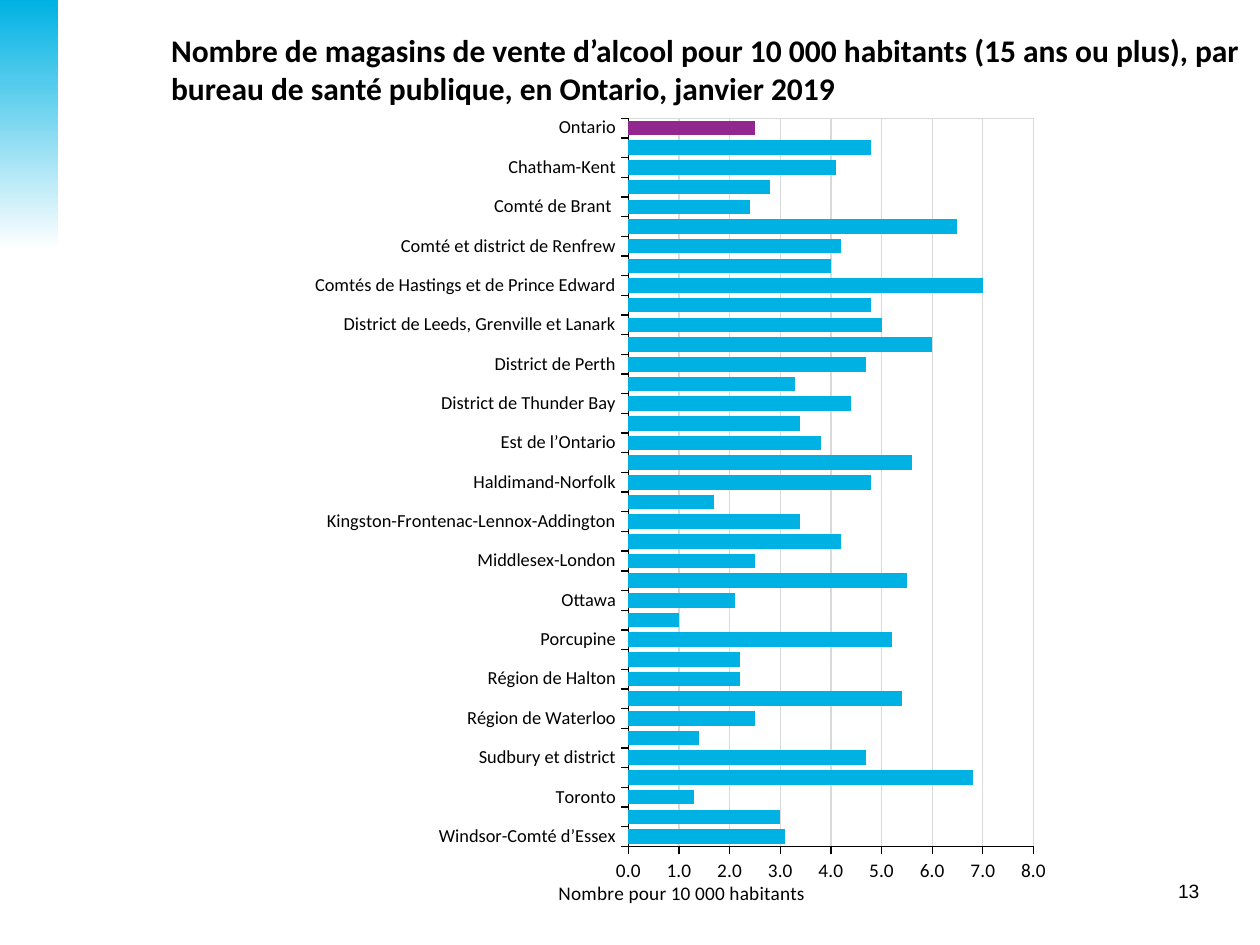
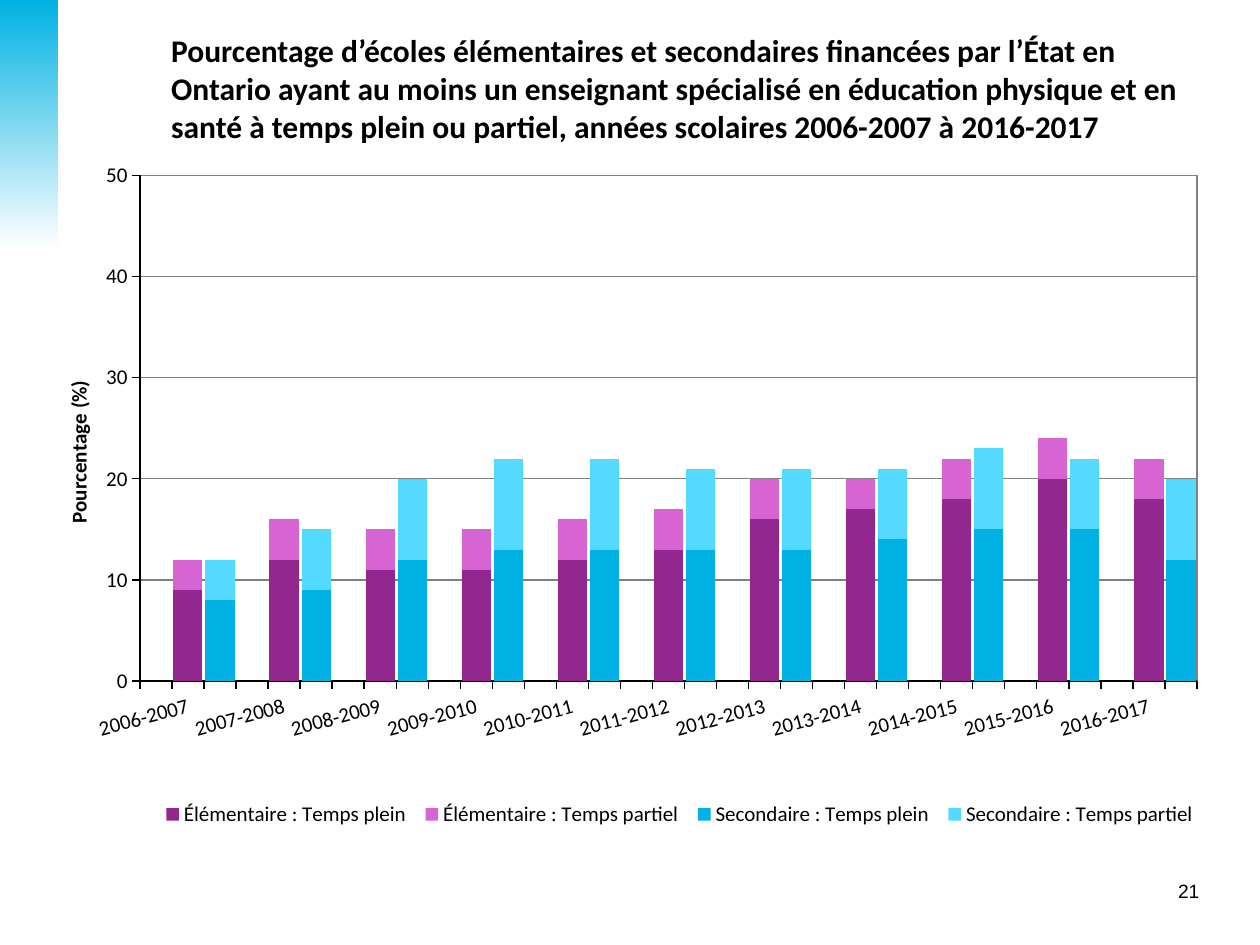
from dataclasses import dataclass

from lxml.etree import SubElement
from pptx import Presentation
from pptx.chart.data import CategoryChartData
from pptx.dml.color import RGBColor
from pptx.enum.chart import (XL_CHART_TYPE, XL_LEGEND_POSITION, XL_TICK_LABEL_POSITION,
                             XL_TICK_MARK)
from pptx.enum.shapes import MSO_SHAPE
from pptx.enum.text import PP_ALIGN
from pptx.oxml import parse_xml
from pptx.oxml.ns import qn
from pptx.util import Cm, Pt


@dataclass(frozen=True)
class Theme:
    blue: str = "00B2E3"
    light_blue: str = "55DAFF"
    purple: str = "92278F"
    pink: str = "D665D3"
    black: str = "000000"
    white: str = "FFFFFF"
    pale_grid: str = "D9D9D9"
    dark_grid: str = "808080"
    font: str = "Calibri"
    number_font: str = "Arial"
    title_size: float = 18
    chart_size: float = 12
    small_size: float = 11
    label_size: float = 10.5
    line_width: float = 0.75


THEME = Theme()

# Stores per 10 000 inhabitants, from the bottom bar to the top one
STORES = {
    "Windsor-Comté d’Essex": 3.1,
    "Wellington-Dufferin-Guelph": 3,
    "Toronto": 1.3,
    "Timiskaming": 6.8,
    "Sudbury et district": 4.7,
    "Région de York": 1.4,
    "Région de Waterloo": 2.5,
    "Région de Niagara": 5.4,
    "Région de Halton": 2.2,
    "Région de Durham": 2.2,
    "Porcupine": 5.2,
    "Peel": 1,
    "Ottawa": 2.1,
    "Nord-Ouest": 5.5,
    "Middlesex-London": 2.5,
    "Lambton": 4.2,
    "Kingston-Frontenac-Lennox-Addington": 3.4,
    "Hamilton": 1.7,
    "Haldimand-Norfolk": 4.8,
    "Grey Bruce ": 5.6,
    "Est de l’Ontario": 3.8,
    "Elgin-St. Thomas": 3.4,
    "District de Thunder Bay": 4.4,
    "District de Simcoe-Muskoka": 3.3,
    "District de Perth": 4.7,
    "District de North Bay-Parry Sound": 6,
    "District de Leeds, Grenville et Lanark": 5,
    "District d’Haliburton, de Kawartha et de Pine Ridge": 4.8,
    "Comtés de Hastings et de Prince Edward": 7,
    "Comté/Ville de Peterborough": 4,
    "Comté et district de Renfrew": 4.2,
    "Comté de Huron": 6.5,
    "Comté de Brant ": 2.4,
    "Comté d’Oxford": 2.8,
    "Chatham-Kent": 4.1,
    "Algoma": 4.8,
    "Ontario": 2.5,
}

# Each school year takes three slots: a gap, elementary, secondary
ELEMENTARY, SECONDARY = 1, 2
SCHOOL_YEARS = [f"{year}-{year + 1}" for year in range(2006, 2017)]
SCHOOLS = [
    ("Élémentaire : Temps plein", ELEMENTARY, THEME.purple,
     [9, 12, 11, 11, 12, 13, 16, 17, 18, 20, 18]),
    ("Élémentaire : Temps partiel", ELEMENTARY, THEME.pink,
     [3, 4, 4, 4, 4, 4, 4, 3, 4, 4, 4]),
    ("Secondaire : Temps plein", SECONDARY, THEME.blue,
     [8, 9, 12, 13, 13, 13, 13, 14, 15, 15, 12]),
    ("Secondaire : Temps partiel", SECONDARY, THEME.light_blue,
     [4, 6, 8, 9, 9, 8, 8, 7, 8, 7, 8]),
]


def spread(values, slot, empty):
    """Put each value in its slot of a group of three."""
    return [v if i == slot else empty for v in values for i in range(3)]


def paint(fill, color):
    fill.solid()
    fill.fore_color.rgb = RGBColor.from_string(color)


def place(element, index, x, y, w=None, h=None, inner=False):
    """Give a chart part a fixed place, in fractions of the chart."""
    layout = element.find(qn("c:layout"))
    if layout is None:
        layout = element.makeelement(qn("c:layout"))
        element.insert(index, layout)
    manual = SubElement(layout, qn("c:manualLayout"))
    settings = [("layoutTarget", "inner" if inner else None), ("xMode", "edge"),
                ("yMode", "edge"), ("x", x), ("y", y), ("w", w), ("h", h)]
    for tag, value in settings:
        if value is not None:
            SubElement(manual, qn(f"c:{tag}")).set("val", str(value))


class Deck:
    def __init__(self, theme):
        self.theme = theme
        self.prs = Presentation()
        self.prs.slide_width, self.prs.slide_height = Cm(25.4), Cm(19.05)
        self.s = None

    def style(self, font, size, bold=False, name=None):
        font.name = name or self.theme.font
        font.size = Pt(size)
        font.bold = bold
        font.color.rgb = RGBColor.from_string(self.theme.black)

    def line(self, line, color):
        paint(line.fill, color)
        line.width = Pt(self.theme.line_width)

    def slide(self, title, title_width, number):
        t = self.theme
        self.s = self.prs.slides.add_slide(self.prs.slide_layouts[6])
        self.band()
        self.text(number, 21.46, 17.6, 2.97, 0.74, t.small_size,
                  name=t.number_font, align=PP_ALIGN.RIGHT)
        self.text(title, 3.2, 0.51, title_width, 1.6, t.title_size, bold=True)

    def band(self):
        sp = self.s.shapes.add_shape(MSO_SHAPE.RECTANGLE, 0, 0, Cm(1.17), Cm(5.03))
        sp.shadow.inherit = False
        sp.line.fill.background()
        sp.fill.gradient()
        sp.fill.gradient_angle = 270
        for stop, color in zip(sp.fill.gradient_stops, (self.theme.blue, self.theme.white)):
            stop.color.rgb = RGBColor.from_string(color)

    def text(self, text, x, y, w, h, size, bold=False, name=None, align=PP_ALIGN.LEFT):
        tf = self.s.shapes.add_textbox(Cm(x), Cm(y), Cm(w), Cm(h)).text_frame
        tf.word_wrap = True
        p = tf.paragraphs[0]
        p.text = text
        p.alignment = align
        self.style(p.font, size, bold, name)

    def chart(self, kind, box, categories, series, plot_box, gap, grid, overlap=None):
        """Add a bar chart; series holds (name, values, color)."""
        data = CategoryChartData()
        data.categories = categories
        for name, values, _ in series:
            data.add_series(name, values)
        chart = self.s.shapes.add_chart(kind, *map(Cm, box), data).chart
        self.style(chart.font, self.theme.chart_size)
        chart.has_title = False
        chart.has_legend = False

        plot = chart.plots[0]
        plot.vary_by_categories = False
        plot.gap_width = gap
        if overlap is not None:
            plot.overlap = overlap
        for ser, (_, _, color) in zip(plot.series, series):
            ser.invert_if_negative = False
            paint(ser.format.fill, color)

        # Plot area with a frame in the gridline colour
        area = chart.plots[0]._element.getparent()
        place(area, 0, *plot_box, inner=True)
        area.append(parse_xml(
            '<c:spPr xmlns:c="http://schemas.openxmlformats.org/drawingml/2006/chart" '
            'xmlns:a="http://schemas.openxmlformats.org/drawingml/2006/main">'
            f'<a:noFill/><a:ln w="{Pt(self.theme.line_width)}"><a:solidFill>'
            f'<a:srgbClr val="{grid}"/></a:solidFill></a:ln></c:spPr>'))
        for axis in (chart.category_axis, chart.value_axis):
            axis.major_tick_mark = XL_TICK_MARK.OUTSIDE
            axis.minor_tick_mark = XL_TICK_MARK.NONE
            self.line(axis.format.line, self.theme.black)
        chart.category_axis.has_major_gridlines = False
        chart.category_axis.tick_label_position = XL_TICK_LABEL_POSITION.LOW
        chart.value_axis.has_major_gridlines = True
        self.line(chart.value_axis.major_gridlines.format.line, grid)
        return chart

    def axes(self, chart, title, top, step, number_format, category_size, value_size,
             bold=False):
        """Set the scale, label sizes and value title; return the title."""
        axis = chart.value_axis
        axis.minimum_scale, axis.maximum_scale, axis.major_unit = 0, top, step
        axis.tick_labels.number_format = number_format
        axis.tick_labels.number_format_is_linked = False
        self.style(axis.tick_labels.font, value_size)
        self.style(chart.category_axis.tick_labels.font, category_size)
        p = axis.axis_title.text_frame.paragraphs[0]
        p.text = title
        self.style(p.font, value_size, bold)
        return axis.axis_title

    def slant_labels(self, chart, degrees):
        """Turn the category labels and show every one of them."""
        axis = chart.category_axis._element
        axis.find(qn("c:txPr")).find(qn("a:bodyPr")).set("rot", str(degrees * 60000))
        skip = axis.makeelement(qn("c:tickLblSkip"), {"val": "1"})
        axis.find(qn("c:noMultiLvlLbl")).addprevious(skip)

    def legend(self, chart, *box):
        chart.has_legend = True
        chart.legend.position = XL_LEGEND_POSITION.BOTTOM
        chart.legend.include_in_layout = False
        self.style(chart.legend.font, self.theme.chart_size)
        place(chart.legend._element, 1, *box)


def stores_slide(deck):
    t = deck.theme
    deck.slide("Nombre de magasins de vente d’alcool pour 10 000 habitants (15 ans ou plus), "
               "par bureau de santé publique, en Ontario, janvier 2019", 22.2, "13")
    chart = deck.chart(XL_CHART_TYPE.BAR_CLUSTERED, (4.45, 2.11, 16.84, 16.26), list(STORES),
                       [("Series 1", list(STORES.values()), t.blue)],
                       (0.488, 0.017, 0.485, 0.906), gap=35, grid=t.pale_grid)
    title = deck.axes(chart, "Nombre pour 10 000 habitants", 8, 1, "0.0",
                      t.label_size, t.small_size)
    place(title._element, 1, 0.4, 0.96)
    # The province stands out from its health units
    ontario = list(STORES).index("Ontario")
    paint(chart.plots[0].series[0].points[ontario].format.fill, t.purple)


def schools_slide(deck):
    t = deck.theme
    deck.slide("Pourcentage d’écoles élémentaires et secondaires financées par l’État en "
               "Ontario ayant au moins un enseignant spécialisé en éducation physique et en "
               "santé à temps plein ou partiel, années scolaires 2006-2007 à 2016-2017",
               21.56, "21")
    series = [(name, spread(values, slot, None), color)
              for name, slot, color, values in SCHOOLS]
    chart = deck.chart(XL_CHART_TYPE.COLUMN_STACKED, (1.22, 3.28, 23.55, 14.05),
                       spread(SCHOOL_YEARS, ELEMENTARY, ""), series,
                       (0.068, 0.018, 0.905, 0.726), gap=10, grid=t.dark_grid, overlap=100)
    deck.axes(chart, "Pourcentage (%)", 50, 10, "General",
              t.chart_size, t.chart_size, bold=True)
    deck.slant_labels(chart, -15)
    deck.legend(chart, 0.08, 0.9, 0.9, 0.07)


def main():
    deck = Deck(THEME)
    stores_slide(deck)
    schools_slide(deck)
    deck.prs.save("out.pptx")


if __name__ == "__main__":
    main()
